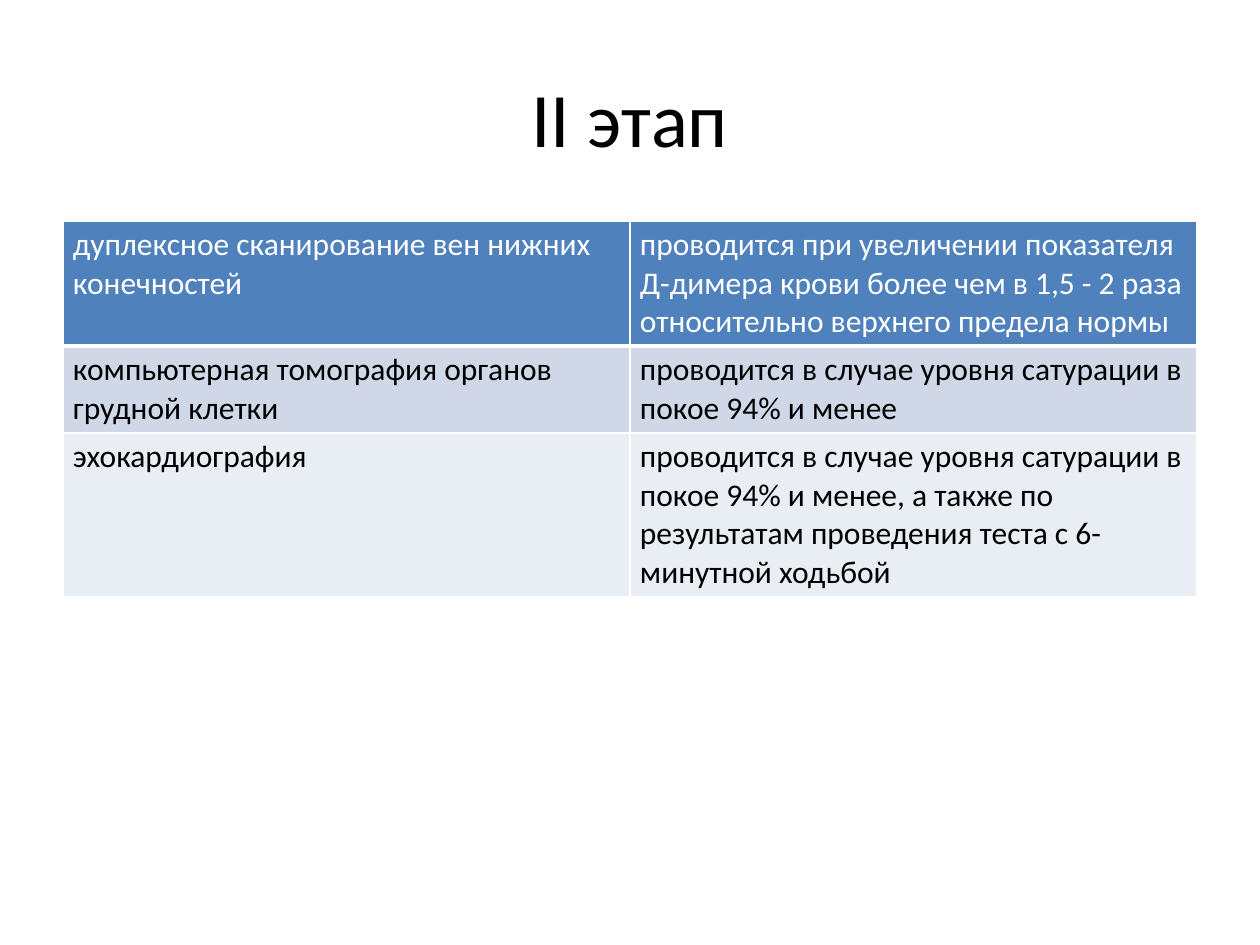
"""Build the slide on the second stage of examination."""
from lxml import etree
from pptx import Presentation
from pptx import util as u
from pptx.dml.color import RGBColor
from pptx.enum import text
from pptx.oxml.ns import qn

TITLE = "II этап"
ROWS = [
    ("дуплексное сканирование вен нижних конечностей",
     "проводится при увеличении показателя Д-димера крови более чем в 1,5 - 2 раза "
     "относительно верхнего предела нормы"),
    ("компьютерная томография органов грудной клетки",
     "проводится в случае уровня сатурации в покое 94% и менее"),
    ("эхокардиография",
     "проводится в случае уровня сатурации в покое 94% и менее, а также по "
     "результатам проведения теста с 6-минутной ходьбой"),
]
HEIGHTS = [125, 87, 164]
WHITE = RGBColor(255, 255, 255)
BLACK = RGBColor(0, 0, 0)
BLUE = RGBColor(0x4F, 0x81, 0xBD)
LIGHT = RGBColor(0xD0, 0xD8, 0xE8)
PALE = RGBColor(0xE9, 0xED, 0xF4)
STYLES = [(BLUE, WHITE), (LIGHT, BLACK), (PALE, BLACK)]
LEFT, WIDTH = 63, 1134


def px(n):
    return u.Emu(n * 914400 // 126)


def style(part, size, color):
    for run in part.runs:
        font = run.font
        font.name, font.size, font.bold = "Calibri", u.Pt(size), False
        font.color.rgb = color


def edge(cell, widths):
    props = cell._tc.get_or_add_tcPr()
    for spot, (side, width) in enumerate(widths.items()):
        line = etree.Element(qn("a:ln" + side), w=str(u.Pt(width)))
        fill = etree.SubElement(line, qn("a:solidFill"))
        etree.SubElement(fill, qn("a:srgbClr"), val=str(WHITE))
        props.insert(spot, line)


def main():
    deck = Presentation()
    deck.slide_width, deck.slide_height = px(1260), px(945)
    slide = deck.slides.add_slide(deck.slide_layouts[6])

    frame = slide.shapes.add_textbox(px(LEFT), px(38), px(WIDTH), px(157)).text_frame
    frame.word_wrap = True
    frame.vertical_anchor = text.MSO_ANCHOR.MIDDLE
    frame.text = TITLE
    head = frame.paragraphs[0]
    head.alignment = text.PP_ALIGN.CENTER
    style(head, 44, BLACK)

    table = slide.shapes.add_table(
        len(ROWS), 2, px(LEFT), px(221), px(WIDTH), px(sum(HEIGHTS))).table
    for col in table.columns:
        col.width = px(WIDTH // 2)
    for r, (row, high, (fill, ink)) in enumerate(zip(ROWS, HEIGHTS, STYLES)):
        table.rows[r].height = px(high)
        for c, words in enumerate(row):
            cell = table.cell(r, c)
            cell.margin_left = cell.margin_right = px(10)
            cell.margin_top = cell.margin_bottom = px(5)
            cell.fill.solid()
            cell.fill.fore_color.rgb = fill
            cell.text_frame.text = words
            style(cell.text_frame.paragraphs[0], 18, ink)
            edge(cell, {"L": 1, "R": 1, "T": 3 if r == 1 else 1, "B": 3 if r == 0 else 1})

    deck.save("out.pptx")


if __name__ == "__main__":
    main()
